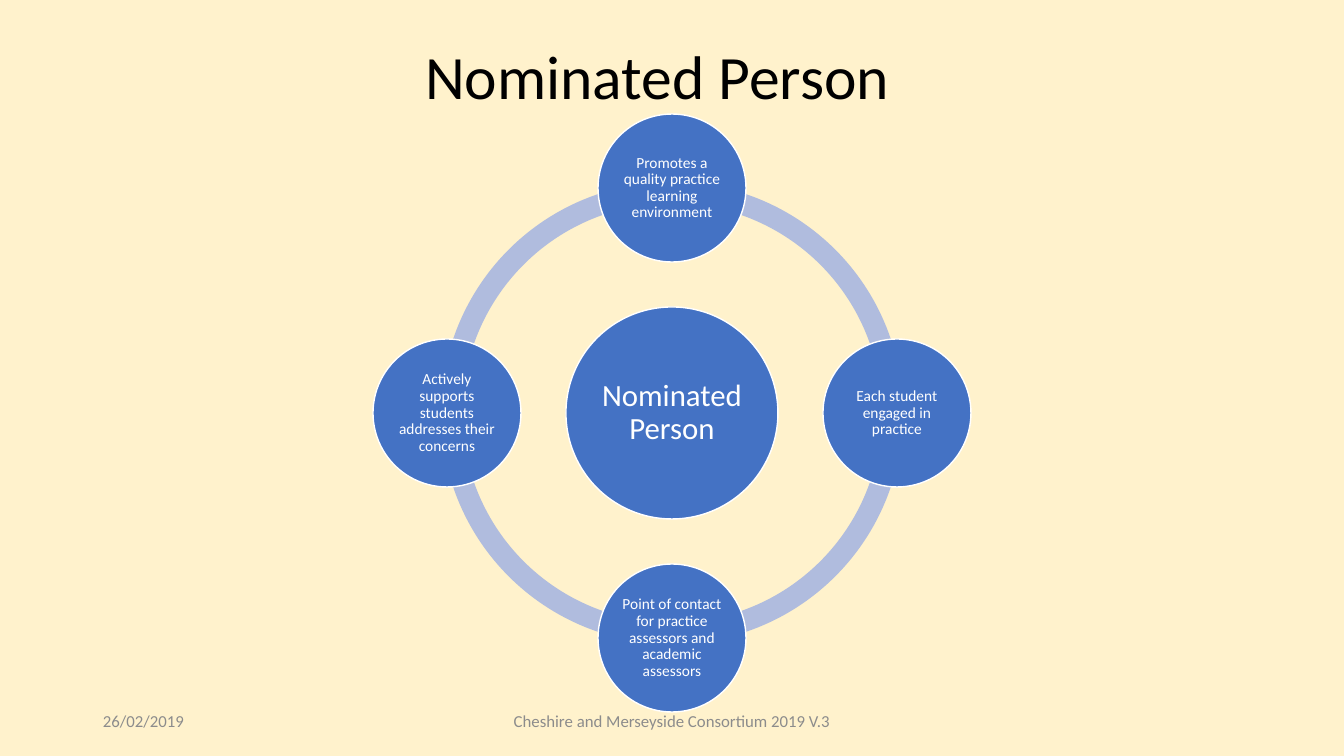
from dataclasses import dataclass

from pptx import Presentation
from pptx.dml.color import RGBColor
from pptx.enum.shapes import MSO_SHAPE as Kind
from pptx.enum.text import MSO_ANCHOR as Anchor, MSO_AUTO_SIZE as Fit, PP_ALIGN as Align
from pptx.util import Emu, Pt

CREAM = RGBColor(0xFF, 0xF2, 0xCC)
BLUE = RGBColor(0x44, 0x72, 0xC4)
PALE = RGBColor(0xB0, 0xBC, 0xDE)
WHITE = RGBColor(0xFF, 0xFF, 0xFF)
BLACK = RGBColor(0, 0, 0)
GREY = RGBColor(0x8C, 0x8C, 0x8C)

WIDE, HIGH = 1344, 756
MID_X, MID_Y = 672, 413
RING = 462
ORBIT = 225
HUB, NODE = 212, 148


@dataclass(frozen=True)
class Disc:
    x: int
    y: int
    width: int
    text: str
    size: int
    inset: int


@dataclass(frozen=True)
class Note:
    left: int
    width: int
    text: str
    align: Align


NODES = (
    (0, -1, "Promotes a quality practice learning environment"),
    (1, 0, "Each student engaged in practice"),
    (0, 1, "Point of contact for practice assessors and academic assessors"),
    (-1, 0, "Actively supports students addresses their concerns"),
)
DISCS = [Disc(MID_X, MID_Y, HUB, "Nominated Person", 22, 3)] + [
    Disc(MID_X + dx * ORBIT, MID_Y + dy * ORBIT, NODE, text, 11, 2)
    for dx, dy, text in NODES
]
NOTES = (
    Note(445, 454, "Cheshire and Merseyside Consortium 2019 V.3", Align.CENTER),
    Note(93, 302, "26/02/2019", Align.LEFT),
)


def px(count: int) -> Emu:
    return Emu(round(count * 914400 / 100.8))


def write(shape, text: str, *, size: int, color: RGBColor, align=Align.CENTER,
          anchor=Anchor.MIDDLE, lines: float = 0.9, insets=(10, 5, 10, 5)) -> None:
    """Fill a shape with one paragraph; insets run left, top, right, bottom."""
    frame = shape.text_frame
    frame.auto_size = Fit.NONE
    frame.word_wrap = True
    frame.vertical_anchor = anchor
    (frame.margin_left, frame.margin_top,
     frame.margin_right, frame.margin_bottom) = map(px, insets)
    para = frame.paragraphs[0]
    para.alignment = align
    para.line_spacing = lines
    run = para.add_run()
    run.text = text
    run.font.name = "Calibri"
    run.font.size = Pt(size)
    run.font.color.rgb = color


def add_round(shapes, kind: Kind, x: int, y: int, width: int, color: RGBColor):
    """Add a filled shape centred on x, y."""
    left, top = x - width // 2, y - width // 2
    shape = shapes.add_shape(kind, px(left), px(top), px(width), px(width))
    shape.shadow.inherit = False
    shape.fill.solid()
    shape.fill.fore_color.rgb = color
    shape.line.fill.background()
    return shape


def add_arc(shapes, start: int) -> None:
    """Add a quarter of the ring, from start degrees clockwise."""
    arc = add_round(shapes, Kind.BLOCK_ARC, MID_X, MID_Y, RING, PALE)
    arc.adjustments[0] = start * 0.6
    arc.adjustments[1] = (start + 90) % 360 * 0.6
    arc.adjustments[2] = 0.046


def add_disc(shapes, disc: Disc) -> None:
    shape = add_round(shapes, Kind.OVAL, disc.x, disc.y, disc.width, BLUE)
    shape.line.color.rgb = WHITE
    shape.line.width = Pt(1)
    write(shape, disc.text, size=disc.size, color=WHITE, insets=(disc.inset,) * 4)


def add_note(shapes, note: Note) -> None:
    box = shapes.add_textbox(px(note.left), px(701), px(note.width), px(40))
    write(box, note.text, size=12, color=GREY, align=note.align, lines=1.0)


def main() -> None:
    deck = Presentation()
    deck.slide_width, deck.slide_height = px(WIDE), px(HIGH)
    slide = deck.slides.add_slide(deck.slide_layouts[5])
    slide.background.fill.solid()
    slide.background.fill.fore_color.rgb = CREAM
    shapes = slide.shapes

    title = shapes.title
    title.left, title.top, title.width, title.height = map(px, (93, 40, 1159, 146))
    write(title, "Nominated Person", size=44, color=BLACK,
          anchor=Anchor.TOP, insets=(10, 6, 40, 5))

    for start in (180, 90, 0, 270):
        add_arc(shapes, start)
    for disc in DISCS:
        add_disc(shapes, disc)
    for note in NOTES:
        add_note(shapes, note)
    deck.save("out.pptx")


if __name__ == "__main__":
    main()
